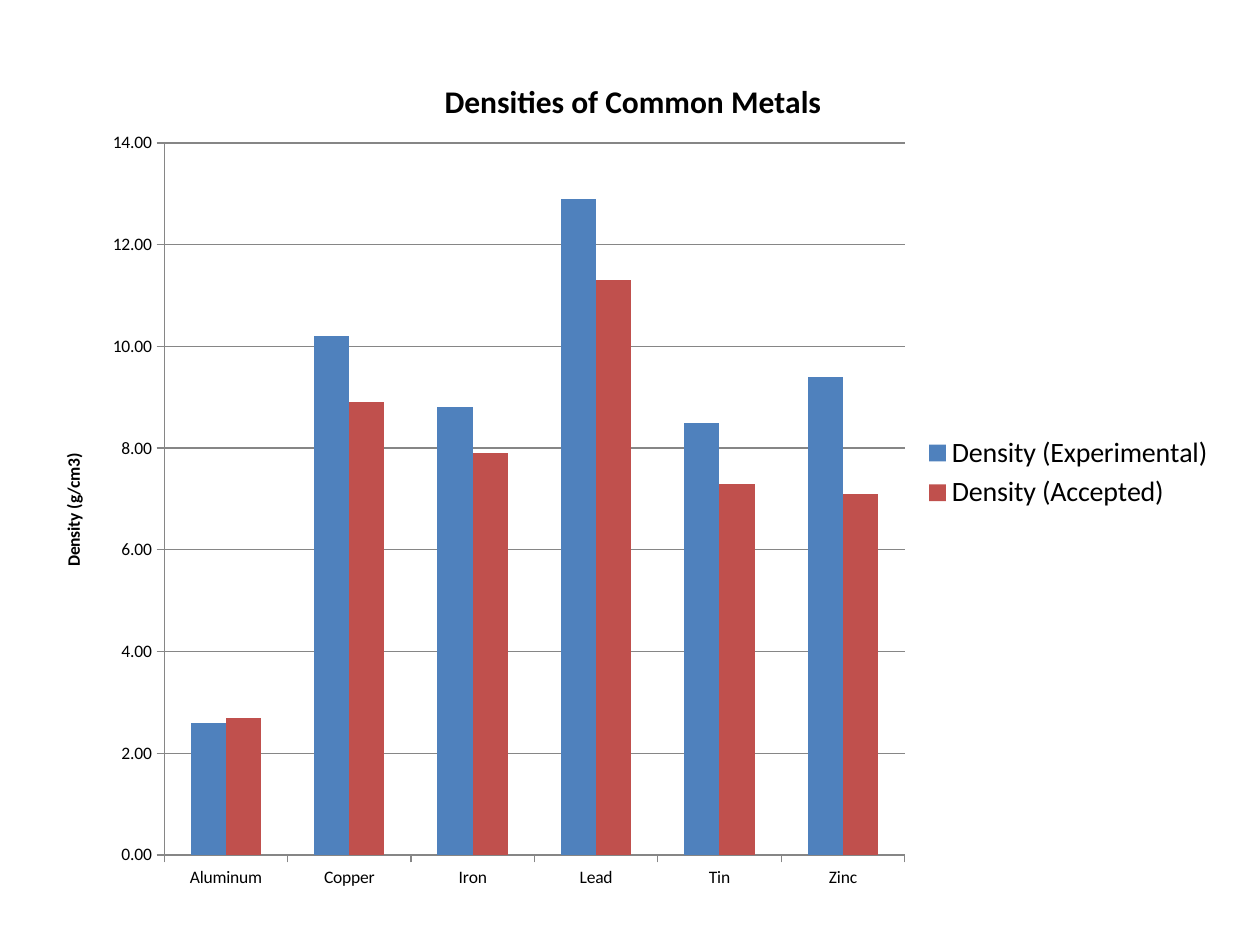
import dataclasses

import lxml.etree
import pptx
import pptx.chart.data
import pptx.dml.color
import pptx.enum.chart
import pptx.oxml.ns
import pptx.util


@dataclasses.dataclass(frozen=True)
class Theme:
    font: str = "Calibri"
    ink: str = "000000"
    rule: str = "868686"
    bars: tuple = ("4F81BD", "C0504D")
    base: int = 10
    key: int = 16
    head: int = 18


THEME = Theme()
WIDE, HIGH = 10, 7.5
METALS = ("Aluminum", "Copper", "Iron", "Lead", "Tin", "Zinc")
SERIES = {
    "Density (Experimental)": (2.6, 10.2, 8.8, 12.9, 8.5, 9.4),
    "Density (Accepted)": (2.7, 8.9, 7.9, 11.3, 7.3, 7.1),
}


def tint(code):
    return pptx.dml.color.RGBColor.from_string(code)


def style(font, size=THEME.base, bold=False, color=THEME.ink):
    font.name = THEME.font
    font.size = pptx.util.Pt(size)
    font.bold = bold
    font.color.rgb = tint(color)


def write(frame, text, **form):
    run = frame.paragraphs[0].add_run()
    run.text = text
    style(run.font, **form)


def place(part, inner=False, **shares):
    """Fix a chart part's place, in shares of the chart's size."""
    qn = pptx.oxml.ns.qn
    box = part.find(qn("c:layout"))
    if box is None:
        box = lxml.etree.Element(qn("c:layout"))
        # The layout follows the text of a title and leads a plot area.
        text = part.find(qn("c:tx"))
        part.insert(0 if text is None else part.index(text) + 1, box)
    for old in list(box):
        box.remove(old)
    spot = lxml.etree.SubElement(box, qn("c:manualLayout"))
    marks = {"layoutTarget": "inner"} if inner else {}
    marks |= {"xMode": "edge", "yMode": "edge"} | shares
    for name, value in marks.items():
        lxml.etree.SubElement(spot, qn("c:" + name)).set("val", str(value))


def add_chart(slide):
    data = pptx.chart.data.CategoryChartData(number_format="0.00")
    data.categories = METALS
    for name, values in SERIES.items():
        data.add_series(name, values)
    shares = zip((0.026, 0.041, 0.948, 0.919), (WIDE, HIGH) * 2)
    spot = [pptx.util.Inches(share * size) for share, size in shares]
    kind = pptx.enum.chart.XL_CHART_TYPE.COLUMN_CLUSTERED
    chart = slide.shapes.add_chart(kind, *spot, data).chart
    style(chart.font)
    return chart


def format_bars(chart):
    plot = chart.plots[0]
    plot.gap_width = 150
    plot.overlap = 0
    plot.vary_by_categories = False
    for bar, color in zip(plot.series, THEME.bars):
        bar.invert_if_negative = False
        bar.format.fill.solid()
        bar.format.fill.fore_color.rgb = tint(color)


def format_line(line):
    line.color.rgb = tint(THEME.rule)
    line.width = pptx.util.Pt(0.75)


def format_axes(chart):
    for axis in (chart.category_axis, chart.value_axis):
        axis.major_tick_mark = pptx.enum.chart.XL_TICK_MARK.OUTSIDE
        format_line(axis.format.line)
        style(axis.tick_labels.font)
    axis = chart.value_axis
    axis.minimum_scale, axis.maximum_scale, axis.major_unit = 0, 14, 2
    axis.has_major_gridlines = True
    format_line(axis.major_gridlines.format.line)
    axis.tick_labels.number_format = "0.00"
    axis.tick_labels.number_format_is_linked = False
    write(axis.axis_title.text_frame, "Density (g/cm3)", bold=True)


def format_title(chart):
    chart.has_title = True
    title = chart.chart_title
    title.include_in_layout = False
    write(title.text_frame, "Densities of Common Metals",
          size=THEME.head, bold=True)
    place(title._element, x=0.34, y=0.04)


def format_legend(chart):
    chart.has_legend = True
    legend = chart.legend
    legend.position = pptx.enum.chart.XL_LEGEND_POSITION.RIGHT
    legend.include_in_layout = False
    style(legend.font, size=THEME.key)


def main():
    deck = pptx.Presentation()
    deck.slide_width = pptx.util.Inches(WIDE)
    deck.slide_height = pptx.util.Inches(HIGH)
    blank = deck.slide_layouts.get_by_name("Blank")
    chart = add_chart(deck.slides.add_slide(blank))
    format_bars(chart)
    format_axes(chart)
    format_title(chart)
    format_legend(chart)
    area = chart._chartSpace.chart.plotArea
    place(area, inner=True, x=0.11, y=0.12, w=0.62, h=0.82)
    deck.save("out.pptx")


if __name__ == "__main__":
    main()
